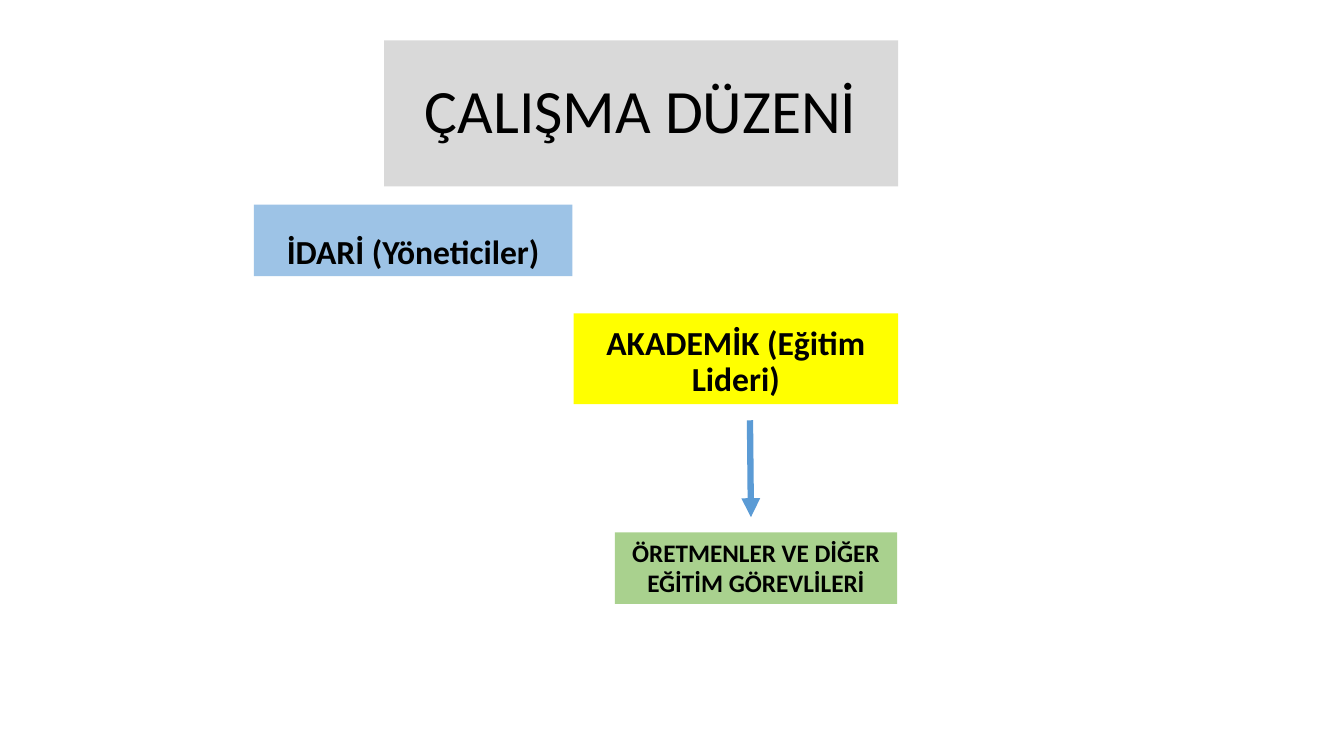
import pptx
import pptx.util
import pptx.dml.color
import pptx.enum.shapes
import pptx.enum.text
import pptx.oxml

Pt = pptx.util.Pt
Anchor = pptx.enum.text.MSO_ANCHOR


def colour(value):
    return pptx.dml.color.RGBColor.from_string(value)


class OrganisationSlide:
    """Holds the slide and its shared style, and draws each kind of element."""

    font = "Calibri"
    ink = "000000"
    arrow_colour = "5B9BD5"

    def __init__(self, deck):
        self.slide = deck.slides.add_slide(deck.slide_layouts[5])

    def fill_in(self, shape, text, fill, size, bold, anchor, spacing, before=0):
        shape.fill.solid()
        shape.fill.fore_color.rgb = colour(fill)
        frame = shape.text_frame
        frame.text = text
        frame.word_wrap = True
        frame.auto_size = pptx.enum.text.MSO_AUTO_SIZE.NONE
        frame.vertical_anchor = anchor
        paragraph = frame.paragraphs[0]
        paragraph.alignment = pptx.enum.text.PP_ALIGN.CENTER
        paragraph.line_spacing = spacing
        paragraph.space_before = Pt(before)
        paragraph.font.name = self.font
        paragraph.font.size = Pt(size)
        paragraph.font.bold = bold
        paragraph.font.color.rgb = colour(self.ink)

    def title(self, text, left, top, width, height, fill):
        heading = self.slide.shapes.title
        heading.left, heading.top = Pt(left), Pt(top)
        heading.width, heading.height = Pt(width), Pt(height)
        self.fill_in(heading, text, fill, 44, False, Anchor.MIDDLE, 0.9)

    def box(self, text, left, top, width, height, fill, size, anchor, spacing, before=0):
        unit = self.slide.shapes.add_shape(
            pptx.enum.shapes.MSO_SHAPE.RECTANGLE,
            Pt(left), Pt(top), Pt(width), Pt(height))
        unit.shadow.inherit = False
        unit.line.fill.background()
        self.fill_in(unit, text, fill, size, True, anchor, spacing, before)

    def arrow(self, x1, y1, x2, y2, weight):
        link = self.slide.shapes.add_connector(
            pptx.enum.shapes.MSO_CONNECTOR.STRAIGHT, Pt(x1), Pt(y1), Pt(x2), Pt(y2))
        link.line.width = Pt(weight)
        link.line.color.rgb = colour(self.arrow_colour)
        tip = pptx.oxml.parse_xml(
            '<a:tailEnd xmlns:a="http://schemas.openxmlformats.org/drawingml/2006/main"'
            ' type="triangle"/>')
        link.line._get_or_add_ln().append(tip)
        no_effects = pptx.oxml.parse_xml(
            '<a:effectLst xmlns:a="http://schemas.openxmlformats.org/drawingml/2006/main"/>')
        link._element.spPr.append(no_effects)


def main():
    deck = pptx.Presentation()
    deck.slide_width, deck.slide_height = Pt(960), Pt(540)
    chart = OrganisationSlide(deck)
    chart.title("ÇALIŞMA DÜZENİ", 274.3, 28.8, 367.2, 104.4, "D9D9D9")
    chart.box("İDARİ (Yöneticiler)", 181.4, 146.2, 227.5, 51.1, "9DC3E6",
              24, Anchor.BOTTOM, 0.9, 10)
    chart.box("AKADEMİK (Eğitim Lideri)", 409.7, 223.9, 231.8, 64.8, "FFFF00",
              24, Anchor.BOTTOM, 0.9, 10)
    chart.arrow(535.7, 300.2, 536.4, 369.4, 4.5)
    chart.box("ÖRETMENLER VE DİĞER EĞİTİM GÖREVLİLERİ", 439.2, 380.2, 201.6, 51.1,
              "A9D18E", 18, Anchor.TOP, 1.0)
    deck.save("out.pptx")


if __name__ == "__main__":
    main()
